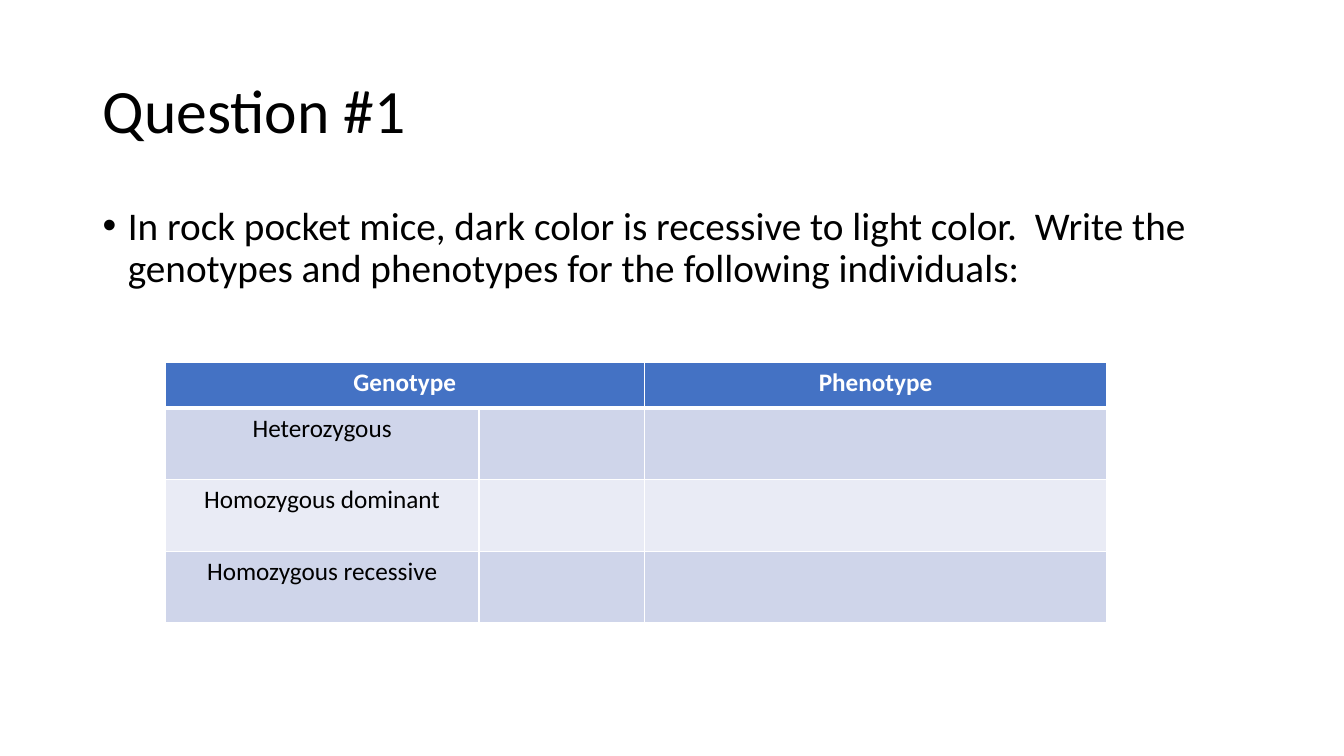
from lxml.etree import SubElement
from pptx import Presentation
from pptx.dml.color import RGBColor
from pptx.enum.text import MSO_ANCHOR, PP_ALIGN
from pptx.oxml.ns import qn
from pptx.util import Inches, Pt

TITLE = "Question #1"
QUESTION = ("In rock pocket mice, dark color is recessive to light color.  "
            "Write the genotypes and phenotypes for the following individuals:")
TABLE_ROWS = [
    ("Genotype", "", "Phenotype"),
    ("Heterozygous", "", ""),
    ("Homozygous dominant", "", ""),
    ("Homozygous recessive", "", ""),
]
COLUMN_WIDTHS = (3.11, 1.64, 4.59)
HEADER_HEIGHT, BODY_HEIGHT = 0.45, 0.71
HEADER_FILL, BAND_FILLS = "4472C4", ("CFD5EA", "E9EBF5")
BLACK, WHITE = "000000", "FFFFFF"
FONT = "Calibri"


def color(hex_string):
    return RGBColor.from_string(hex_string)


def format_paragraph(paragraph, size, font_color, bold=False):
    for run in paragraph.runs:
        run.font.name = FONT
        run.font.size = Pt(size)
        run.font.bold = bold
        run.font.color.rgb = color(font_color)


def add_text(slide, text, top, height, size, anchor):
    text_box = slide.shapes.add_textbox(Inches(0.92), Inches(top), Inches(11.5), Inches(height))
    text_frame = text_box.text_frame
    text_frame.word_wrap = True
    text_frame.vertical_anchor = anchor
    text_frame.text = text
    paragraph = text_frame.paragraphs[0]
    paragraph.line_spacing = 0.9
    format_paragraph(paragraph, size, BLACK)
    return paragraph


def add_bullet(paragraph):
    properties = paragraph._p.get_or_add_pPr()
    properties.set("marL", str(Inches(0.25)))
    properties.set("indent", str(Inches(-0.25)))
    SubElement(properties, qn("a:buFont"), typeface="Arial")
    SubElement(properties, qn("a:buChar"), char="•")


def set_borders(cell, top, bottom):
    """Draw white borders: 1 pt at the sides, the given points above and below."""
    properties = cell._tc.get_or_add_tcPr()
    for side, width in (("L", 1), ("R", 1), ("T", top), ("B", bottom)):
        line = SubElement(properties, qn(f"a:ln{side}"), w=str(Pt(width)))
        fill = SubElement(line, qn("a:solidFill"))
        SubElement(fill, qn("a:srgbClr"), val=WHITE)


def add_genotype_table(slide):
    height = HEADER_HEIGHT + BODY_HEIGHT * (len(TABLE_ROWS) - 1)
    table = slide.shapes.add_table(
        len(TABLE_ROWS), len(COLUMN_WIDTHS), Inches(1.64), Inches(3.6),
        Inches(sum(COLUMN_WIDTHS)), Inches(height)).table
    for column, width in zip(table.columns, COLUMN_WIDTHS):
        column.width = Inches(width)
    for row_index, texts in enumerate(TABLE_ROWS):
        header = row_index == 0
        table.rows[row_index].height = Inches(HEADER_HEIGHT if header else BODY_HEIGHT)
        fill_color = HEADER_FILL if header else BAND_FILLS[(row_index - 1) % 2]
        for column_index, text in enumerate(texts):
            cell = table.cell(row_index, column_index)
            set_borders(cell, 3 if row_index == 1 else 1, 3 if header else 1)
            cell.fill.solid()
            cell.fill.fore_color.rgb = color(fill_color)
            cell.text_frame.text = text
            paragraph = cell.text_frame.paragraphs[0]
            paragraph.alignment = PP_ALIGN.CENTER
            format_paragraph(paragraph, 18, WHITE if header else BLACK, header)
    table.cell(0, 0).merge(table.cell(0, 1))


def main():
    presentation = Presentation()
    presentation.slide_width = Inches(13.33)
    presentation.slide_height = Inches(7.5)
    slide = presentation.slides.add_slide(presentation.slide_layouts[6])
    add_text(slide, TITLE, 0.4, 1.45, 44, MSO_ANCHOR.MIDDLE)
    question = add_text(slide, QUESTION, 2, 1.46, 28, MSO_ANCHOR.TOP)
    question.space_before = Pt(10)
    add_bullet(question)
    add_genotype_table(slide)
    presentation.save("out.pptx")


if __name__ == "__main__":
    main()
